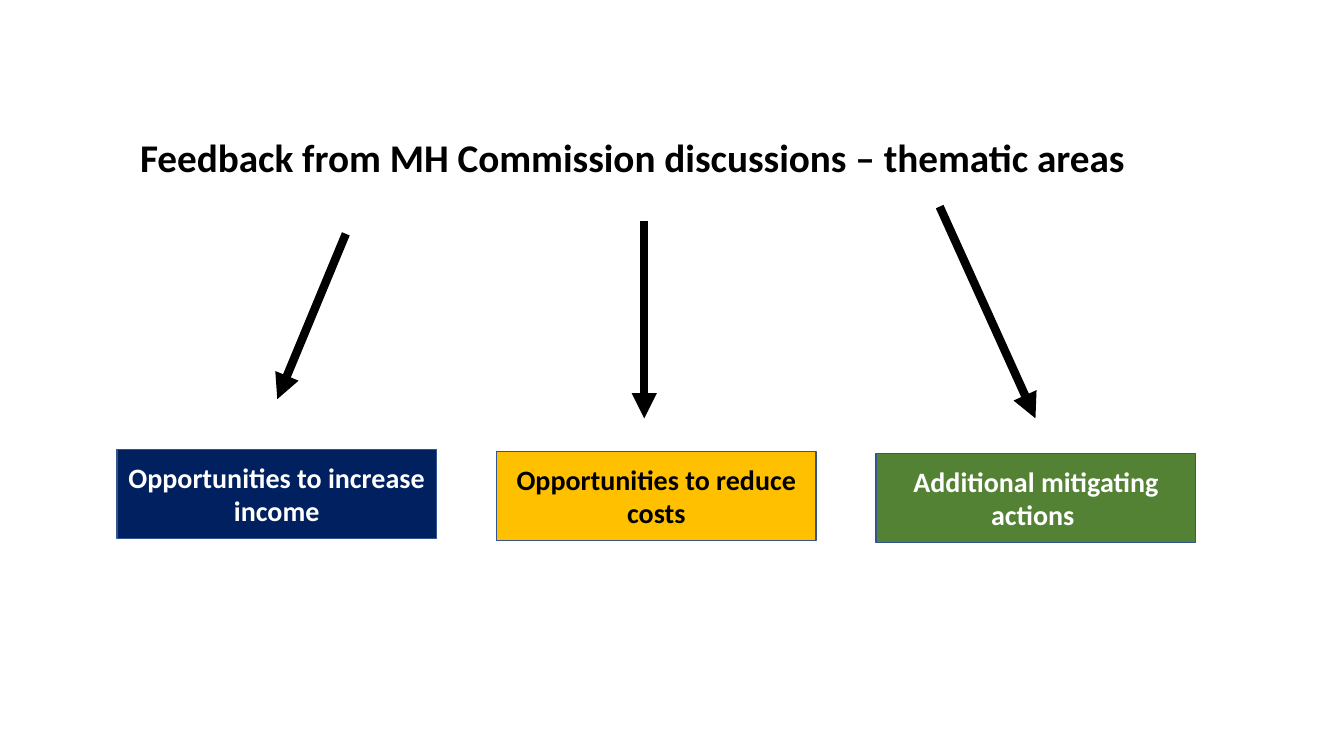
from dataclasses import dataclass

from lxml.etree import SubElement
from pptx import Presentation
from pptx.dml.color import RGBColor
from pptx.enum.shapes import MSO_CONNECTOR as Line, MSO_SHAPE as Shape
from pptx.enum.text import MSO_ANCHOR as Anchor, MSO_AUTO_SIZE as Fit, PP_ALIGN as Align
from pptx.oxml.ns import qn
from pptx.slide import Slide
from pptx.text.text import TextFrame
from pptx.util import Inches, Pt

BLACK = RGBColor(0x00, 0x00, 0x00)
WHITE = RGBColor(0xFF, 0xFF, 0xFF)
NAVY = RGBColor(0x00, 0x20, 0x60)
GOLD = RGBColor(0xFF, 0xC0, 0x00)
GREEN = RGBColor(0x54, 0x82, 0x35)
EDGE = RGBColor(0x32, 0x54, 0x91)

LEFT, TOP = 1.16, 4.46
STEP, DROP = 3.765, 0.02
WIDTH, HEIGHT = 3.17, 0.88


@dataclass
class Theme:
    text: str
    fill: RGBColor
    ink: RGBColor
    start: tuple[float, float]
    end: tuple[float, float]


THEMES = [
    Theme("Opportunities to increase income", NAVY, WHITE, (3.43, 2.32), (2.75, 3.96)),
    Theme("Opportunities to reduce costs", GOLD, BLACK, (6.39, 2.19), (6.39, 4.15)),
    Theme("Additional mitigating actions ", GREEN, WHITE, (9.32, 2.05), (10.27, 4.15)),
]


def write(frame: TextFrame, text: str, size: int, ink: RGBColor) -> None:
    frame.word_wrap = True
    frame.text = text
    font = frame.paragraphs[0].runs[0].font
    font.name = "Calibri"
    font.size = Pt(size)
    font.bold = True
    font.color.rgb = ink


def add_title(slide: Slide, text: str) -> None:
    box = slide.shapes.add_textbox(Inches(1.29), Inches(1.27), Inches(11.65), Inches(0.57))
    write(box.text_frame, text, 28, BLACK)
    box.text_frame.auto_size = Fit.SHAPE_TO_FIT_TEXT


def add_box(slide: Slide, theme: Theme, index: int) -> None:
    box = slide.shapes.add_shape(
        Shape.RECTANGLE,
        Inches(LEFT + index * STEP),
        Inches(TOP + index * DROP),
        Inches(WIDTH),
        Inches(HEIGHT),
    )
    box.shadow.inherit = False
    box.fill.solid()
    box.fill.fore_color.rgb = theme.fill
    box.line.color.rgb = EDGE
    box.line.width = Pt(1)
    write(box.text_frame, theme.text, 20, theme.ink)
    box.text_frame.vertical_anchor = Anchor.MIDDLE
    box.text_frame.paragraphs[0].alignment = Align.CENTER


def add_arrow(slide: Slide, theme: Theme) -> None:
    ends = [Inches(value) for value in theme.start + theme.end]
    arrow = slide.shapes.add_connector(Line.STRAIGHT, *ends)
    arrow.line.color.rgb = BLACK
    arrow.line.width = Pt(6)
    SubElement(arrow.line._get_or_add_ln(), qn("a:tailEnd"), type="triangle")
    SubElement(arrow._element.spPr, qn("a:effectLst"))


def main() -> None:
    deck = Presentation()
    deck.slide_width = Inches(13.33)
    deck.slide_height = Inches(7.5)
    slide = deck.slides.add_slide(deck.slide_layouts[6])
    add_title(slide, "Feedback from MH Commission discussions – thematic areas")
    for index, theme in enumerate(THEMES):
        add_box(slide, theme, index)
        add_arrow(slide, theme)
    deck.save("out.pptx")


if __name__ == "__main__":
    main()
